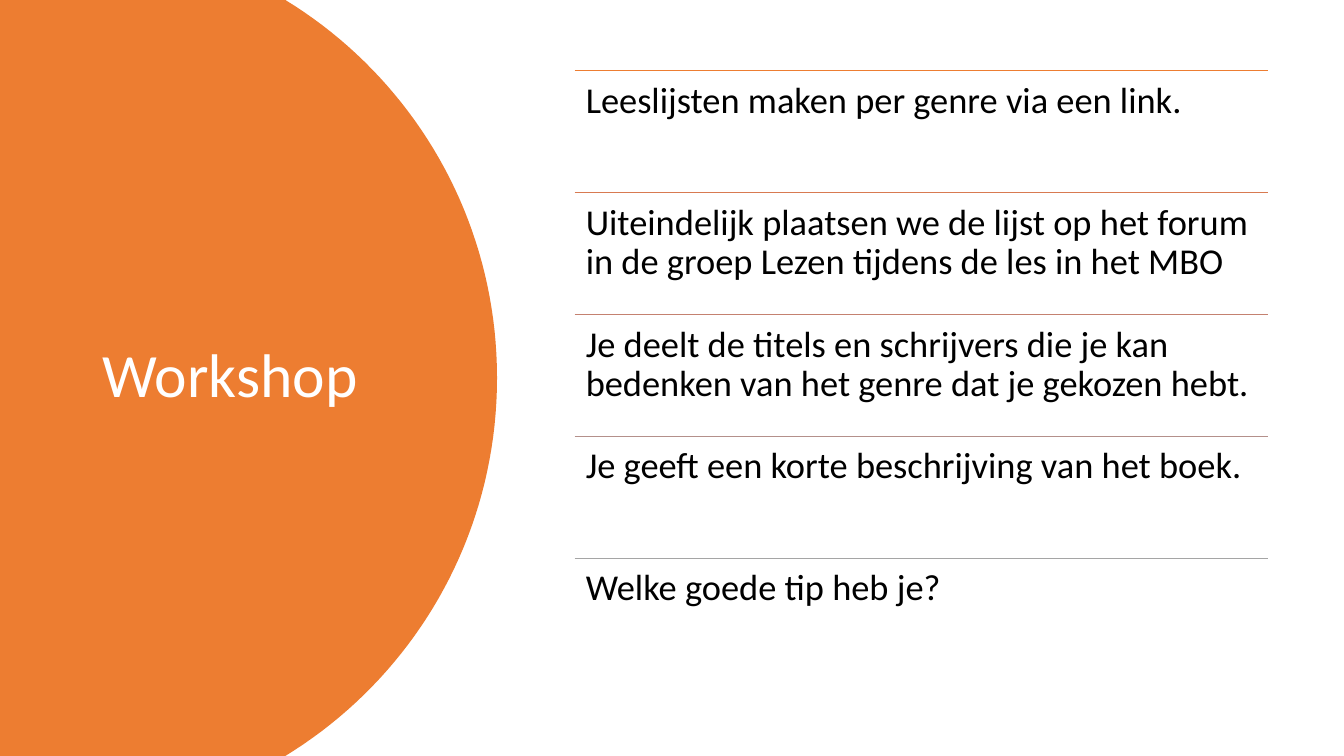
"""Build the Workshop slide: an orange rounded panel with a title beside five ruled lines of text."""
import dataclasses

import pptx
import pptx.dml.color
import pptx.enum.shapes
import pptx.enum.text
import pptx.oxml
import pptx.oxml.ns
import pptx.slide
import pptx.util

Inches = pptx.util.Inches
Point = tuple[float, float]

SLIDE_WIDTH, SLIDE_HEIGHT = 13.33, 7.5
ORANGE, WHITE, BLACK = "ED7D31", "FFFFFF", "000000"
LIST_LEFT, LIST_TOP, LIST_WIDTH, ROW_HEIGHT = 5.7, 0.7, 6.88, 1.21
UPPER_ARC: list[Point] = [(2.83, 0), (4.09, 0.77), (4.93, 2.16), (4.93, 3.75)]
ARC_STEPS = 40


@dataclasses.dataclass(frozen=True)
class Step:
    text: str
    rule_color: str


@dataclasses.dataclass(frozen=True)
class TextStyle:
    size: float
    color: str
    inset: float
    anchor: pptx.enum.text.MSO_ANCHOR
    space_after: float = 0


TITLE_STYLE = TextStyle(44, WHITE, 0.1, pptx.enum.text.MSO_ANCHOR.MIDDLE)
STEP_STYLE = TextStyle(26, BLACK, 0.11, pptx.enum.text.MSO_ANCHOR.TOP, 9)

STEPS = [
    Step("Leeslijsten maken per genre via een link.", ORANGE),
    Step("Uiteindelijk plaatsen we de lijst op het forum in de groep Lezen tijdens de les in het MBO", "D87A51"),
    Step("Je deelt de titels en schrijvers die je kan bedenken van het genre dat je gekozen hebt.", "C48170"),
    Step("Je geeft een korte beschrijving van het boek.", "B4908B"),
    Step("Welke goede tip heb je?", "A5A5A5"),
]


def rgb(color: str) -> pptx.dml.color.RGBColor:
    """Turn a hex string into a colour."""
    return pptx.dml.color.RGBColor.from_string(color)


def bezier_point(controls: list[Point], t: float) -> Point:
    """Return the point at t on a cubic curve."""
    weights = ((1 - t) ** 3, 3 * t * (1 - t) ** 2, 3 * t**2 * (1 - t), t**3)
    x = sum(weight * control[0] for weight, control in zip(weights, controls))
    y = sum(weight * control[1] for weight, control in zip(weights, controls))
    return x, y


def add_panel(slide: pptx.slide.Slide) -> None:
    """Draw the orange panel with its curved right edge."""
    upper = [bezier_point(UPPER_ARC, step / ARC_STEPS) for step in range(ARC_STEPS + 1)]
    lower = [(x, SLIDE_HEIGHT - y) for x, y in reversed(upper[:-1])]
    outline = [*upper, *lower, (0, SLIDE_HEIGHT)]
    builder = slide.shapes.build_freeform(0, 0)
    builder.add_line_segments([(Inches(x), Inches(y)) for x, y in outline], close=True)
    panel = builder.convert_to_shape()
    panel.shadow.inherit = False
    panel.fill.solid()
    panel.fill.fore_color.rgb = rgb(ORANGE)
    panel.line.fill.background()


def add_text(slide: pptx.slide.Slide, text: str, left: float, top: float,
             width: float, height: float, style: TextStyle) -> None:
    """Add a wrapped text box in the given style."""
    box = slide.shapes.add_textbox(Inches(left), Inches(top), Inches(width), Inches(height))
    frame = box.text_frame
    frame.word_wrap = True
    frame.vertical_anchor = style.anchor
    frame.margin_left = frame.margin_right = Inches(style.inset)
    frame.margin_top = frame.margin_bottom = Inches(style.inset)
    paragraph = frame.paragraphs[0]
    paragraph.text = text
    paragraph.line_spacing = 0.9
    paragraph.space_after = pptx.util.Pt(style.space_after)
    paragraph.font.name = "Calibri"
    paragraph.font.size = pptx.util.Pt(style.size)
    paragraph.font.color.rgb = rgb(style.color)


def add_rule(slide: pptx.slide.Slide, top: float, color: str) -> None:
    """Draw a thin horizontal rule across the list."""
    rule = slide.shapes.add_connector(
        pptx.enum.shapes.MSO_CONNECTOR.STRAIGHT,
        Inches(LIST_LEFT), Inches(top), Inches(LIST_LEFT + LIST_WIDTH), Inches(top),
    )
    rule.line.color.rgb = rgb(color)
    rule.line.width = pptx.util.Pt(1)
    properties = rule._element.find(pptx.oxml.ns.qn("p:spPr"))
    properties.append(pptx.oxml.parse_xml(f"<a:effectLst {pptx.oxml.ns.nsdecls('a')}/>"))


def main() -> None:
    """Build and save the presentation."""
    presentation = pptx.Presentation()
    presentation.slide_width = Inches(SLIDE_WIDTH)
    presentation.slide_height = Inches(SLIDE_HEIGHT)
    slide = presentation.slides.add_slide(presentation.slide_layouts[6])

    add_panel(slide)
    add_text(slide, "Workshop", 0.92, 0.7, 3.23, 6.09, TITLE_STYLE)
    for row, step in enumerate(STEPS):
        top = LIST_TOP + row * ROW_HEIGHT
        add_rule(slide, top, step.rule_color)
        add_text(slide, step.text, LIST_LEFT, top, LIST_WIDTH, ROW_HEIGHT, STEP_STYLE)
    presentation.save("out.pptx")


if __name__ == "__main__":
    main()
